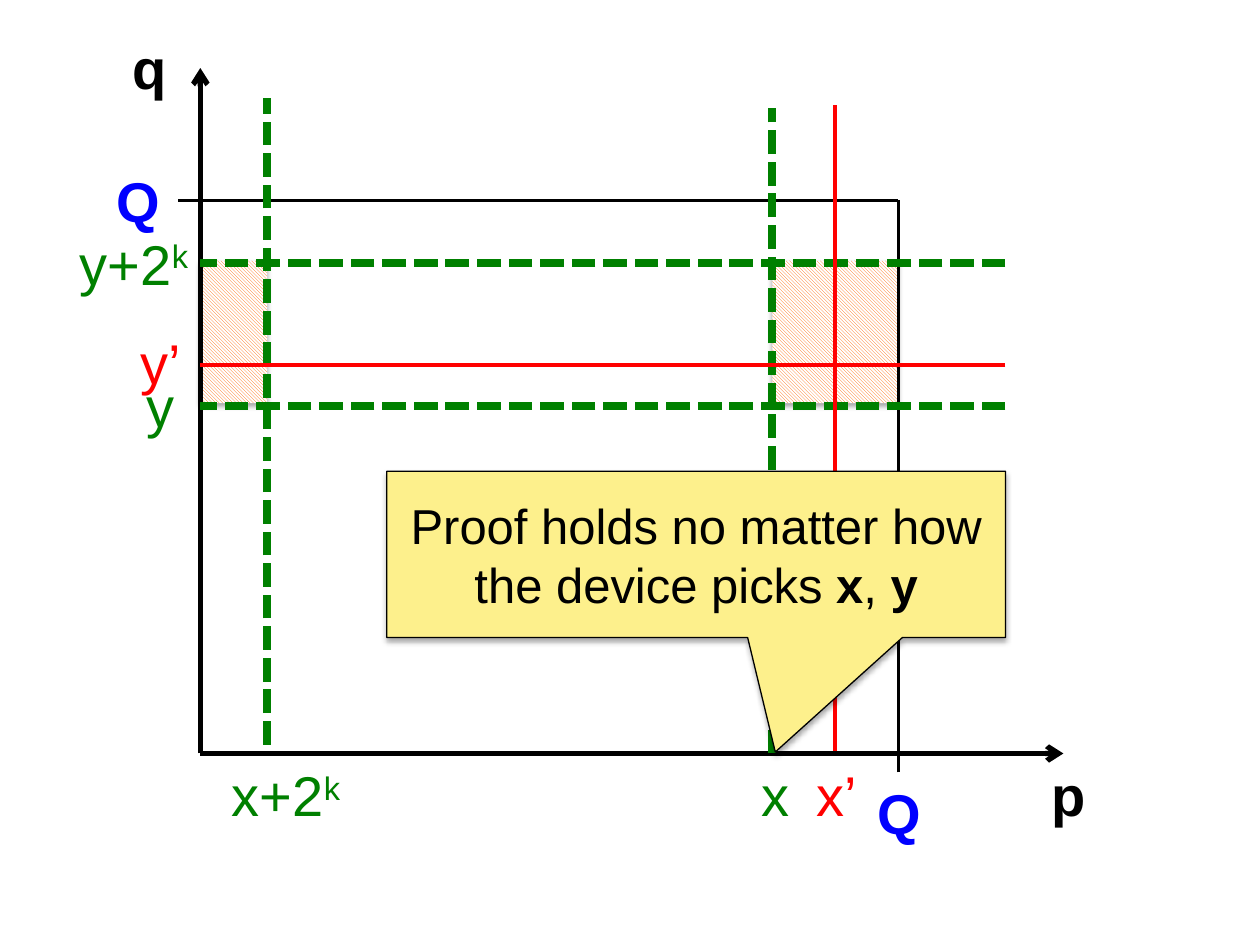
import pptx
import pptx.util
import pptx.dml.color
import pptx.enum.dml
import pptx.enum.shapes
import pptx.enum.text
import pptx.oxml
import pptx.oxml.ns

Inches = pptx.util.Inches
Pt = pptx.util.Pt
RGBColor = pptx.dml.color.RGBColor
Dash = pptx.enum.dml.MSO_LINE
Kind = pptx.enum.shapes.MSO_SHAPE
Align = pptx.enum.text.PP_ALIGN

BLACK = RGBColor(0, 0, 0)
WHITE = RGBColor(255, 255, 255)
BLUE = RGBColor(0, 0, 255)
GREEN = RGBColor(0, 128, 0)
RED = RGBColor(255, 0, 0)
ORANGE = RGBColor(255, 102, 0)
YELLOW = RGBColor(0xFD, 0xF0, 0x8C)

NS = pptx.oxml.ns.nsdecls("a")
SHADOW = (
    f'<a:effectLst {NS}><a:outerShdw blurRad="{Pt(3.1)}" dist="{Pt(1.8)}" '
    'dir="5400000" rotWithShape="0"><a:srgbClr val="000000">'
    '<a:alpha val="35000"/></a:srgbClr></a:outerShdw></a:effectLst>'
)


def add_xml(parent, xml):
    parent.append(pptx.oxml.parse_xml(xml))


def add_line(slide, start, end, color, width, dash=None, arrow=False):
    ends = [Inches(v) for v in (*start, *end)]
    line = slide.shapes.add_connector(
        pptx.enum.shapes.MSO_CONNECTOR.STRAIGHT, *ends)
    line.line.color.rgb = color
    line.line.width = Pt(width)
    if dash:
        line.line.dash_style = dash
    if arrow:
        add_xml(line.line._get_or_add_ln(), f'<a:tailEnd {NS} type="arrow"/>')
    add_xml(line._element.spPr, f"<a:effectLst {NS}/>")


def add_label(slide, text, left, top, color, width=0.63, bold=False,
              power=None, align=Align.CENTER):
    box = slide.shapes.add_textbox(
        Inches(left), Inches(top), Inches(width), Inches(0.64))
    frame = box.text_frame
    frame.word_wrap = True
    frame.auto_size = pptx.enum.text.MSO_AUTO_SIZE.SHAPE_TO_FIT_TEXT
    para = frame.paragraphs[0]
    para.alignment = align
    font = para.font
    font.name, font.size, font.bold = "Arial", Pt(32), bold
    font.color.rgb = color
    para.add_run().text = text
    if power:
        run = para.add_run()
        run.text = power
        run._r.get_or_add_rPr().set("baseline", "30000")


def add_patch(slide, left, top, width, height):
    patch = slide.shapes.add_shape(
        Kind.RECTANGLE, Inches(left), Inches(top), Inches(width), Inches(height))
    patch.fill.patterned()
    patch.fill.pattern = pptx.enum.dml.MSO_PATTERN.DARK_DOWNWARD_DIAGONAL
    patch.fill.fore_color.rgb = ORANGE
    patch.fill.back_color.rgb = WHITE
    patch.line.fill.background()
    add_xml(patch._element.spPr, SHADOW)


def draw_plot(slide, left, top, width, height):
    """Axes, bounds, guide lines and labels, placed from the box's corners."""
    base = top + height
    far = left + 6.39                                # right end of the guides
    x_low, x_high, x_red, x_max = (left + d for d in (0.53, 4.54, 5.04, 5.54))
    y_low, y_high, y_red, y_max = (base - d for d in (2.76, 3.89, 3.08, 4.39))

    # Hatched regions
    for start, end in ((left, x_low), (x_high, x_max)):
        add_patch(slide, start, y_high - 0.02, end - start, 1.13)

    # Axes
    for tip in ((left + width, base), (left, top)):
        add_line(slide, (left, base), tip, BLACK, 3, arrow=True)

    # Bounds at Q
    add_line(slide, (x_max, base + 0.15), (x_max, y_max), BLACK, 1.5)
    add_line(slide, (x_max, y_max), (left - 0.18, y_max), BLACK, 1.5)

    # Green dashed guides
    for x, low, high in ((x_high, base, 0.32), (x_low, base - 0.07, 0.24)):
        add_line(slide, (x, low), (x, top + high), GREEN, 4.5, Dash.SQUARE_DOT)
    for y in (y_low, y_high):
        add_line(slide, (far, y), (left, y), GREEN, 4.5, Dash.SQUARE_DOT)

    # Red guides
    add_line(slide, (x_red, base - 0.02), (x_red, top + 0.29), RED, 2.25)
    add_line(slide, (far, y_red), (left, y_red), RED, 2.25)

    # Labels under the p axis
    under = base + 0.01
    add_label(slide, "p", left + 6.58, under, BLACK, bold=True)
    add_label(slide, "Q", x_max - 0.31, base + 0.15, BLUE, bold=True)
    add_label(slide, "x", x_high - 0.29, under, GREEN)
    add_label(slide, "x’", x_red - 0.3, under, RED)
    add_label(slide, "x+2", left - 0.18, under, GREEN, 1.72, power="k")

    # Labels beside the q axis
    add_label(slide, "q", left - 0.81, top - 0.32, BLACK, 0.81, bold=True)
    add_label(slide, "Q", left - 0.81, y_max - 0.32, BLUE, bold=True)
    add_label(slide, "y", left - 0.63, y_low - 0.32, GREEN)
    add_label(slide, "y’", left - 0.63, y_red - 0.34, RED)
    add_label(slide, "y+2", left - 1.8, y_high - 0.32, GREEN, 1.8,
              power="k", align=Align.RIGHT)


def draw_note(slide, left, top, width, height):
    """Callout that points at x on the p axis."""
    note = slide.shapes.add_shape(
        Kind.RECTANGULAR_CALLOUT,
        Inches(left), Inches(top), Inches(width), Inches(height))
    note.adjustments[0] = 0.128
    note.adjustments[1] = 1.188
    note.fill.solid()
    note.fill.fore_color.rgb = YELLOW
    note.line.color.rgb = BLACK
    note.line.width = Pt(0.75)
    add_xml(note._element.spPr, SHADOW)

    frame = note.text_frame
    frame.word_wrap = True
    frame.vertical_anchor = pptx.enum.text.MSO_ANCHOR.MIDDLE
    para = frame.paragraphs[0]
    para.alignment = Align.CENTER
    para.font.name, para.font.size = "Arial", Pt(28)
    para.font.color.rgb = BLACK
    for text, bold in (("Proof holds no matter how the device picks ", False),
                       ("x", True), (", ", False), ("y", True)):
        run = para.add_run()
        run.text = text
        run.font.bold = bold


def main():
    deck = pptx.Presentation()
    deck.slide_width, deck.slide_height = Inches(10), Inches(7.5)
    slide = deck.slides.add_slide(deck.slide_layouts[6])
    draw_plot(slide, 1.59, 0.54, 6.85, 5.44)
    draw_note(slide, 3.07, 3.74, 4.91, 1.32)
    deck.save("out.pptx")


if __name__ == "__main__":
    main()
